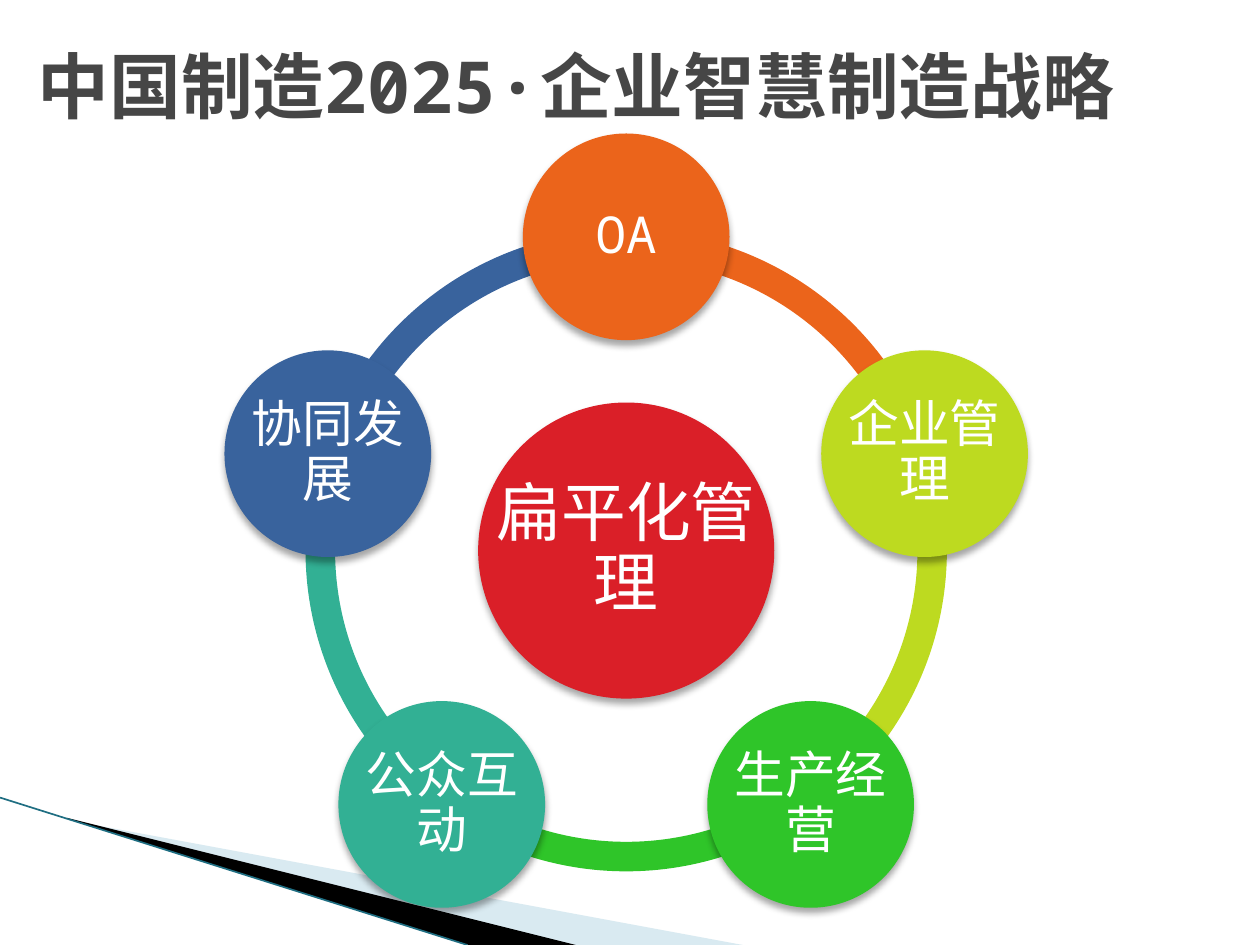
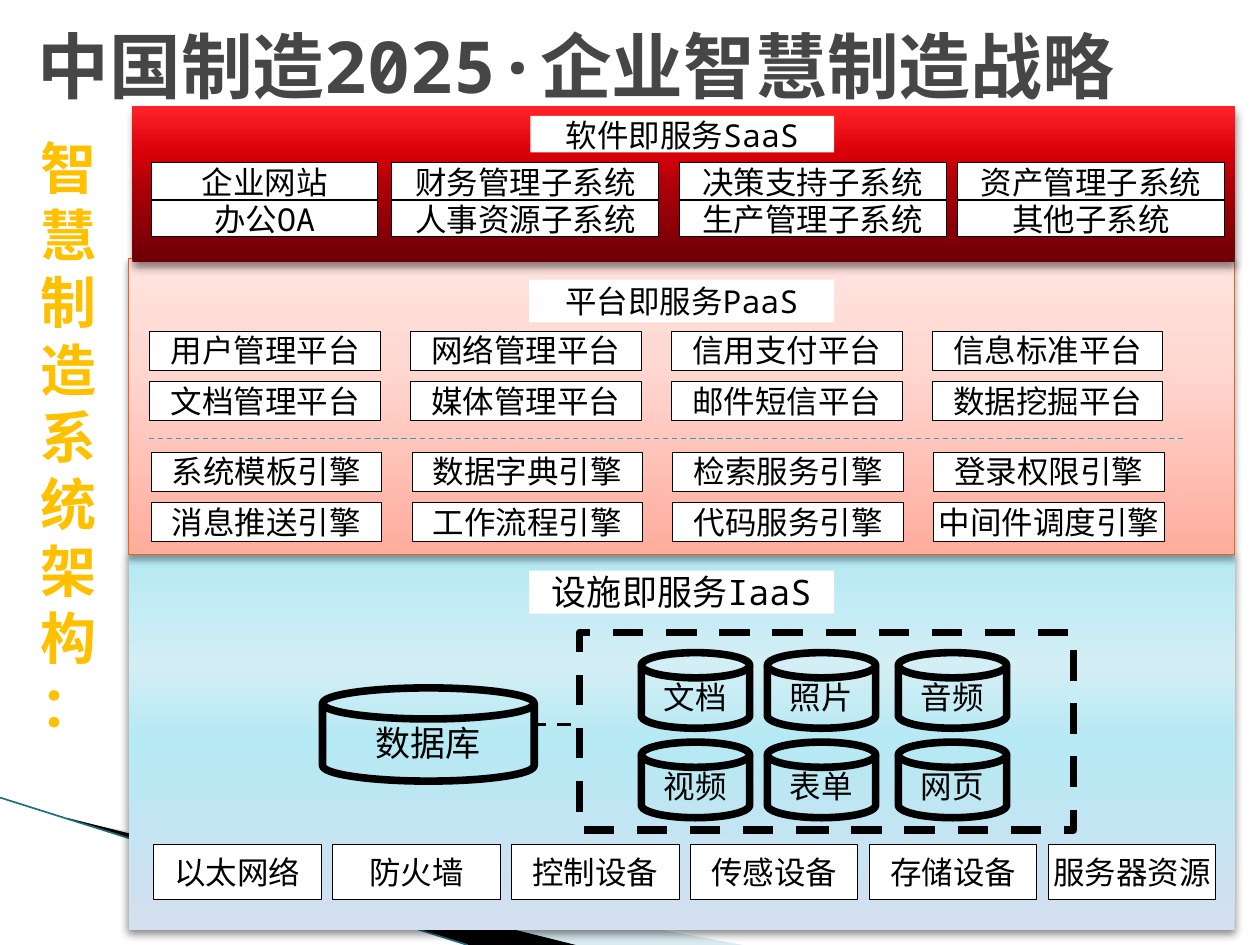
import math
import lxml.etree
import pptx
import pptx.util
import pptx.dml.color
import pptx.enum.dml
import pptx.enum.shapes
import pptx.enum.text
import pptx.oxml.ns

Inches = pptx.util.Inches
Pt = pptx.util.Pt
qn = pptx.oxml.ns.qn
KIND = pptx.enum.shapes.MSO_SHAPE
ALIGN = pptx.enum.text.PP_ALIGN
ANCHOR = pptx.enum.text.MSO_ANCHOR
DASH = pptx.enum.dml.MSO_LINE.DASH

FONT = "Noto Sans Mono"
TITLE = "中国制造2025·企业智慧制造战略"
BLACK, WHITE = "000000", "FFFFFF"
SOFT = (35, 4)
DEEP = (45, 5)


def color(code):
    return pptx.dml.color.RGBColor.from_string(code)


def add(parent, tag, **values):
    node = lxml.etree.SubElement(parent, qn(tag))
    for key, value in values.items():
        node.set(key, str(value))
    return node


def apply(target, values):
    for key, value in values.items():
        setattr(target, key, value)


class Deck:
    def __init__(self):
        self.show = pptx.Presentation()
        apply(self.show, {"slide_width": Inches(10), "slide_height": Inches(7.5)})
        self.slide = None

    def page(self):
        self.slide = self.show.slides.add_slide(self.show.slide_layouts[6])
        self.poly([(0.55, 6.51), (5.95, 7.51), (4.56, 7.51), (0.55, 6.5)], "A0CBDC", 40)
        self.poly([(0.53, 6.49), (4.57, 7.5), (3.72, 7.5), (0.54, 6.5)], BLACK)
        self.line((0, 6.33), (3.71, 7.5), "1F6E82", 0.95)

    def poly(self, points, fill, alpha=100):
        spots = [(Inches(x), Inches(y)) for x, y in points]
        pen = self.slide.shapes.build_freeform(*spots[0])
        pen.add_line_segments(spots[1:])
        shape = pen.convert_to_shape()
        self.paint(shape, fill)
        if alpha < 100:
            tint = shape._element.spPr.find(qn("a:solidFill"))[0]
            add(tint, "a:alpha", val=alpha * 1000)

    def line(self, start, end, tone, width, dash=None):
        link = self.slide.shapes.add_connector(
            pptx.enum.shapes.MSO_CONNECTOR.STRAIGHT,
            *[Inches(v) for v in start + end])
        link.line.color.rgb = color(tone)
        apply(link.line, {"width": Pt(width), "dash_style": dash})
        add(link._element.spPr, "a:effectLst")

    def paint(self, shape, fill=None, edge=None, width=0.5, dash=None, shade=None):
        if fill is None:
            shape.fill.background()
        elif isinstance(fill, str):
            shape.fill.solid()
            shape.fill.fore_color.rgb = color(fill)
        else:
            self.blend(shape, fill)
        if edge:
            shape.line.color.rgb = color(edge)
            apply(shape.line, {"width": Pt(width), "dash_style": dash})
        else:
            shape.line.fill.background()
        shape.shadow.inherit = False
        if shade:
            self.shade(shape, *shade)

    def blend(self, shape, stops):
        shape.fill.gradient()
        grad = shape._element.spPr.find(qn("a:gradFill"))
        for child in list(grad):
            grad.remove(child)
        group = add(grad, "a:gsLst")
        for spot, tone in stops:
            add(add(group, "a:gs", pos=spot * 1000), "a:srgbClr", val=tone)
        add(grad, "a:lin", ang=270 * 60000, scaled=0)

    def shade(self, shape, alpha, blur):
        effect = shape._element.spPr.find(qn("a:effectLst"))
        drop = add(effect, "a:outerShdw", blurRad=Pt(blur), dist=Pt(3),
                   dir=90 * 60000, algn="ctr", rotWithShape=0)
        add(add(drop, "a:srgbClr", val=BLACK), "a:alpha", val=alpha * 1000)

    def letter(self, shape, text, size=18, tone=BLACK, bold=False, inset=0.0,
               side=0.0, anchor=ANCHOR.MIDDLE, align=ALIGN.CENTER, space=None):
        frame = shape.text_frame
        apply(frame, {
            "word_wrap": True, "vertical_anchor": anchor,
            "margin_left": Inches(side), "margin_right": Inches(side),
            "margin_top": Inches(inset), "margin_bottom": Inches(inset)})
        para = frame.paragraphs[0]
        apply(para, {"alignment": align, "line_spacing": space})
        run = para.add_run()
        run.text = text
        apply(run.font, {"size": Pt(size), "bold": bold, "name": FONT})
        run.font.color.rgb = color(tone)
        mark = run._r.get_or_add_rPr()
        mark.set("lang", "zh-CN")
        add(mark, "a:ea", typeface=FONT)

    def shape(self, kind, x, y, w, h, **look):
        item = self.slide.shapes.add_shape(
            kind, Inches(x), Inches(y), Inches(w), Inches(h))
        self.paint(item, **look)
        return item

    def text(self, x, y, w, h, words, **style):
        box = self.slide.shapes.add_textbox(
            Inches(x), Inches(y), Inches(w), Inches(h))
        self.letter(box, words, **style)

    def title(self, top):
        self.text(0.2, top, 9.5, 1.25, TITLE, size=41, tone="464646", bold=True,
                  inset=0.05, side=0.1, align=ALIGN.LEFT)

    def ball(self, x, y, size, fill, words, points, inset):
        place = (x - size / 2, y - size / 2, size, size)
        self.shape(KIND.OVAL, *place, fill=fill, shade=SOFT)
        self.text(*place, words, size=points, tone=WHITE, inset=inset,
                  side=inset, space=0.9)

    def arc(self, x, y, size, start, end, fill):
        ring = self.shape(KIND.BLOCK_ARC, x - size / 2, y - size / 2, size, size,
                          fill=fill)
        for i, value in enumerate((start % 360 * 0.6, end % 360 * 0.6, 0.046)):
            ring.adjustments[i] = value

    def cell(self, x, y, w, h, words, anchor=ANCHOR.TOP):
        box = self.shape(KIND.RECTANGLE, x, y, w, h, fill=WHITE, edge=BLACK)
        self.letter(box, words, anchor=anchor)

    def label(self, x, y, w, h, words, **style):
        self.letter(self.shape(KIND.RECTANGLE, x, y, w, h, fill=WHITE), words, **style)

    def disk(self, x, y, w, h, words, size=18):
        can = self.shape(KIND.FLOWCHART_MAGNETIC_DISK, x, y, w, h,
                         edge=BLACK, width=4.33)
        self.letter(can, words, size=size)


def cycle(deck):
    nodes = [("OA", "EB641B"), ("企业管理", "BDDA20"), ("生产经营", "2FC529"),
             ("公众互动", "32B094"), ("协同发展", "39639D")]
    x, y, reach = 4.97, 4.37, 2.49
    turn = 360 / len(nodes)
    deck.page()
    for i, (_, fill) in reversed(list(enumerate(nodes))):
        start = 270 + i * turn
        deck.arc(x, y, 5.09, start, start + turn, fill)
    deck.ball(x, y, 2.35, "DA1F28", "扁平化管理", 37, 0.05)
    for i, (words, fill) in enumerate(nodes):
        angle = math.radians(270 + i * turn)
        deck.ball(x + reach * math.cos(angle), y + reach * math.sin(angle),
                  1.64, fill, words, 29, 0.04)
    deck.title(0.05)


def saas(deck):
    deck.label(4.21, 0.92, 2.41, 0.29, "软件即服务SaaS", anchor=ANCHOR.TOP)
    spans = [(1.2, 1.8), (3.11, 2.12), (5.39, 2.12), (7.6, 2.12)]
    rows = ["企业网站 财务管理子系统 决策支持子系统 资产管理子系统",
            "办公OA 人事资源子系统 生产管理子系统 其他子系统"]
    for r, row in enumerate(rows):
        for (x, w), words in zip(spans, row.split()):
            deck.cell(x, 1.29 + 0.3 * r, w, 0.29, words)


def paas(deck):
    deck.label(4.2, 2.22, 2.42, 0.34, "平台即服务PaaS")
    rows = [(1.19, 2.63, "用户管理平台 网络管理平台 信用支付平台 信息标准平台"),
            (1.19, 3.03, "文档管理平台 媒体管理平台 邮件短信平台 数据挖掘平台"),
            (1.2, 3.59, "系统模板引擎 数据字典引擎 检索服务引擎 登录权限引擎"),
            (1.2, 3.99, "消息推送引擎 工作流程引擎 代码服务引擎 中间件调度引擎")]
    for x, y, row in rows:
        for c, words in enumerate(row.split()):
            deck.cell(x + 2.07 * c, y, 1.83, 0.31, words)
    deck.line((1.18, 3.48), (9.41, 3.48), "2DA2BF", 0.75, DASH)


def iaas(deck):
    deck.label(4.2, 4.53, 2.42, 0.34, "设施即服务IaaS", size=20, anchor=ANCHOR.TOP)
    deck.disk(2.56, 5.46, 1.68, 0.74, "数据库", 20)
    for y, row in ((5.18, "文档 照片 音频"), (5.89, "视频 表单 网页")):
        for x, words in zip((5.09, 6.09, 7.13), row.split()):
            deck.disk(x, y, 0.86, 0.6, words)
    deck.shape(KIND.RECTANGLE, 4.6, 5.02, 3.92, 1.57, edge=BLACK, width=4.33, dash=DASH)
    deck.line((4.53, 5.75), (4.24, 5.75), BLACK, 2, DASH)
    gear = "以太网络 防火墙 控制设备 传感设备 存储设备 服务器资源"
    for i, words in enumerate(gear.split()):
        deck.cell(1.22 + 1.42 * i, 6.7, 1.33, 0.44, words, ANCHOR.MIDDLE)


def layers(deck):
    deck.page()
    deck.shape(KIND.RECTANGLE, 1.02, 4.4, 8.78, 2.98, shade=DEEP,
               fill=[(0, "D4DFEF"), (50, "B5E9F4"), (70, "D3EEF5"), (100, "B5E9F4")])
    deck.shape(KIND.RECTANGLE, 1.02, 2.05, 8.78, 2.35, shade=SOFT,
               edge="EB641B", width=0.75,
               fill=[(0, "FFAC9C"), (65, "FFD8D2"), (100, "FFE4DF")])
    deck.shape(KIND.RECTANGLE, 1.05, 0.84, 8.75, 1.24, shade=DEEP,
               fill=[(0, "6D0005"), (50, "B00008"), (70, "DA0008"), (100, "FF2429")])
    saas(deck)
    paas(deck)
    iaas(deck)
    deck.label(0.22, 1.01, 0.6, 4.95, "智慧制造系统架构：", size=32, tone="FFC000",
               bold=True, inset=0.05, side=0.1, anchor=ANCHOR.TOP)
    deck.title(-0.11)


def main():
    deck = Deck()
    cycle(deck)
    layers(deck)
    deck.show.save("out.pptx")


if __name__ == "__main__":
    main()
